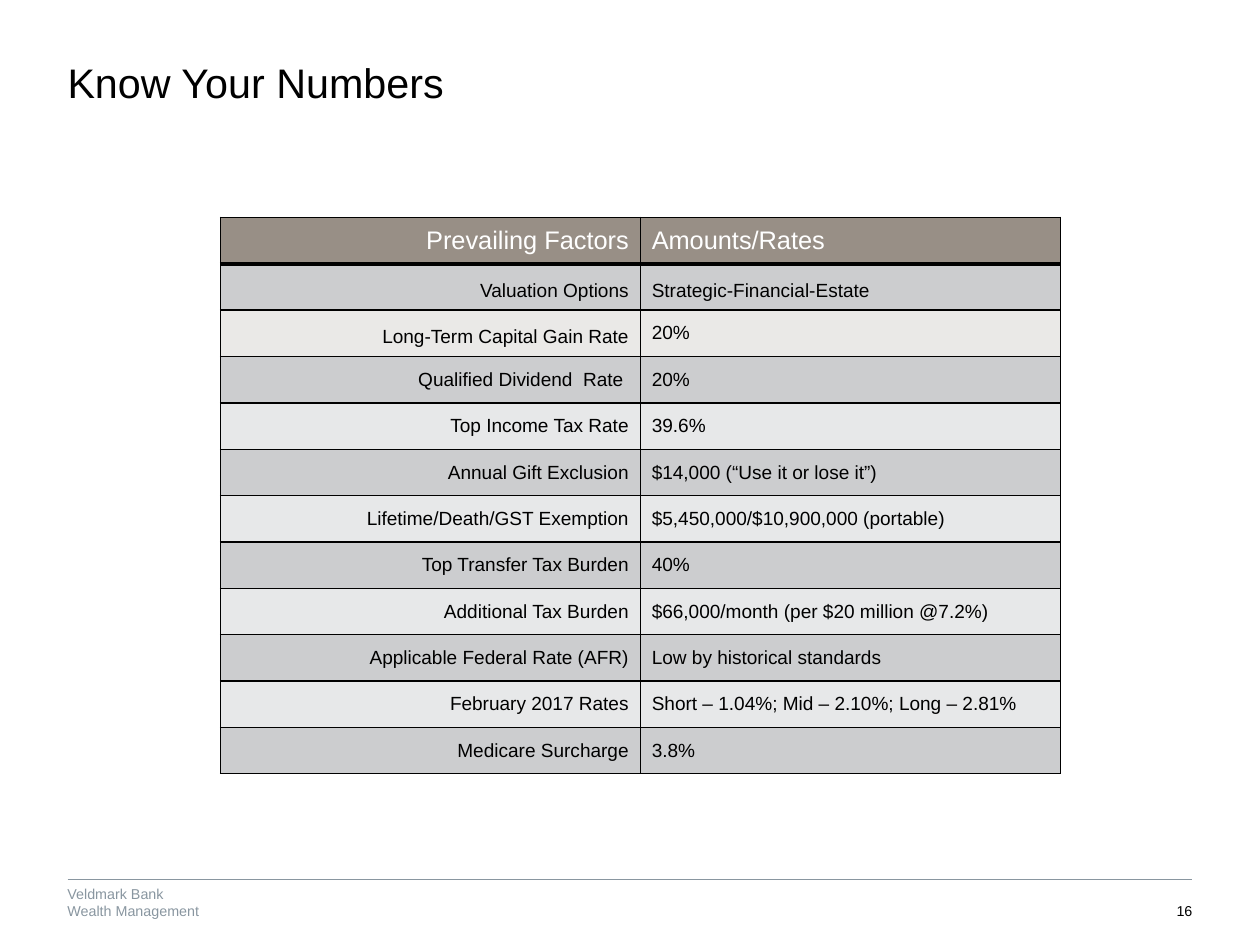
import pptx
import pptx.util
import pptx.dml.color
import pptx.enum.shapes
import pptx.enum.text
import pptx.oxml
import pptx.oxml.ns

Cm, Pt = pptx.util.Cm, pptx.util.Pt
ALIGN = pptx.enum.text.PP_ALIGN
ANCHOR = pptx.enum.text.MSO_ANCHOR

BLACK, WHITE, GREY = "000000", "FFFFFF", "8996A0"
HEAD, DARK, LIGHT, WARM = "988F86", "CCCDCF", "E7E8E9", "EAE9E7"

ROWS = [
    ("Prevailing Factors", "Amounts/Rates"),
    ("Valuation Options", "Strategic-Financial-Estate"),
    ("Long-Term Capital Gain Rate", "20%"),
    ("Qualified Dividend  Rate ", "20%"),
    ("Top Income Tax Rate", "39.6%"),
    ("Annual Gift Exclusion", "$14,000 (“Use it or lose it”)"),
    ("Lifetime/Death/GST Exemption", "$5,450,000/$10,900,000 (portable)"),
    ("Top Transfer Tax Burden", "40%"),
    ("Additional Tax Burden", "$66,000/month (per $20 million @7.2%)"),
    ("Applicable Federal Rate (AFR)", "Low by historical standards"),
    ("February 2017 Rates", "Short – 1.04%; Mid – 2.10%; Long – 2.81%"),
    ("Medicare Surcharge", "3.8%"),
]
SPACED = {(1, 0), (1, 1), (2, 0)}  # cells with wide line spacing


def color(code):
    return pptx.dml.color.RGBColor.from_string(code)


def add_run(para, text, size, code):
    run = para.add_run()
    run.text = text
    run.font.name = "Arial"
    run.font.size = Pt(size)
    run.font.bold = False
    run.font.color.rgb = color(code)


def set_frame(frame, anchor, top=0, right=0):
    frame.word_wrap = True
    frame.auto_size = pptx.enum.text.MSO_AUTO_SIZE.NONE
    frame.vertical_anchor = anchor
    frame.margin_left = frame.margin_bottom = 0
    frame.margin_top, frame.margin_right = top, right


def add_title(slide, left, top, width, height):
    title = slide.shapes.title
    title.left, title.top, title.width, title.height = left, top, width, height
    set_frame(title.text_frame, ANCHOR.TOP, right=Cm(1.5))
    para = title.text_frame.paragraphs[0]
    para.alignment = ALIGN.LEFT
    para.line_spacing = 0.9
    add_run(para, "Know Your Numbers", 26, BLACK)


def set_edges(cell, header, below):
    props = cell._tc.get_or_add_tcPr()
    widths = {"lnL": 1, "lnR": 1, "lnT": 3 if below else 1,
              "lnB": 3 if header else 1}
    for side, width in widths.items():
        props.append(pptx.oxml.parse_xml(
            f'<a:{side} {pptx.oxml.ns.nsdecls("a")} w="{Pt(width)}">'
            f'<a:solidFill><a:srgbClr val="{BLACK}"/></a:solidFill></a:{side}>'))


def row_fill(row):
    if row == 0:
        return HEAD
    if row == 2:
        return WARM
    return DARK if row % 2 else LIGHT


def add_rates(slide, left, top, width, height):
    table = slide.shapes.add_table(len(ROWS), 2, left, top, width, height).table
    for row, texts in enumerate(ROWS):
        header = row == 0
        for col, text in enumerate(texts):
            cell = table.cell(row, col)
            set_edges(cell, header, row == 1)
            cell.fill.solid()
            cell.fill.fore_color.rgb = color(row_fill(row))
            cell.vertical_anchor = ANCHOR.MIDDLE
            para = cell.text_frame.paragraphs[0]
            para.alignment = ALIGN.LEFT if col else ALIGN.RIGHT
            if (row, col) in SPACED:
                para.line_spacing = Pt(18)
                para.space_after = Pt(6)
            add_run(para, text, 16 if header else 12,
                    WHITE if header else BLACK)


def add_footer(slide, left, top, width, height):
    # Rule
    rule = slide.shapes.add_connector(
        pptx.enum.shapes.MSO_CONNECTOR.STRAIGHT, left, top, left + width, top)
    rule.line.color.rgb = color(GREY)
    rule.line.width = Pt(0.5)
    rule._element.spPr.append(
        pptx.oxml.parse_xml(f'<a:effectLst {pptx.oxml.ns.nsdecls("a")}/>'))

    # Sender
    sender = slide.shapes.add_textbox(left, top, Cm(6), height).text_frame
    set_frame(sender, ANCHOR.TOP, top=Cm(0.13))
    para = sender.paragraphs[0]
    add_run(para, "Veldmark Bank", 9, GREY)
    para.add_line_break()
    add_run(para, "Wealth Management", 9, GREY)

    # Page number
    wide = Cm(1.5)
    page = slide.shapes.add_textbox(
        left + width - wide, top, wide, height).text_frame
    set_frame(page, ANCHOR.BOTTOM, top=Cm(0.1))
    page.paragraphs[0].alignment = ALIGN.RIGHT
    add_run(page.paragraphs[0], "16", 9, BLACK)


def main():
    deck = pptx.Presentation()
    deck.slide_width, deck.slide_height = Cm(28), Cm(21.06)
    slide = deck.slides.add_slide(deck.slide_layouts[5])
    add_title(slide, Cm(1.5), Cm(1.4), Cm(23.5), Cm(2.1))
    add_rates(slide, Cm(4.9), Cm(4.83), Cm(18.66), Cm(12.36))
    add_footer(slide, Cm(1.5), Cm(19.53), Cm(25), Cm(0.9))
    deck.save("out.pptx")


if __name__ == "__main__":
    main()
